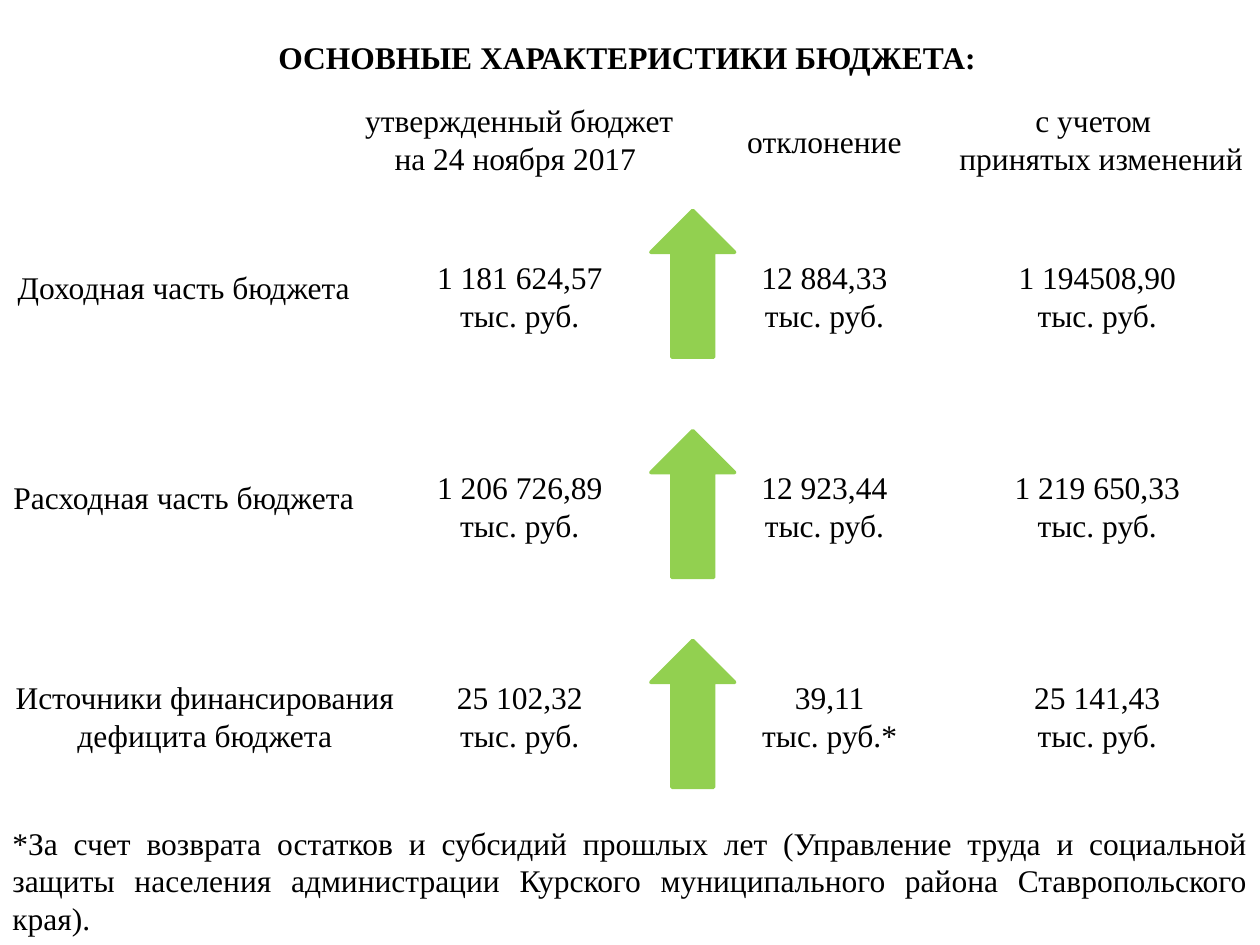
"""Build the slide with the main budget characteristics."""
from dataclasses import dataclass

from pptx import Presentation
from pptx.dml.color import RGBColor
from pptx.enum.shapes import MSO_SHAPE
from pptx.enum.text import MSO_ANCHOR, MSO_AUTO_SIZE, PP_ALIGN
from pptx.util import Cm, Pt


@dataclass(frozen=True)
class Theme:
    """Hold the colours and type of the slide."""
    font: str = "Times New Roman"
    size: Pt = Pt(18)
    text: RGBColor = RGBColor(0x00, 0x00, 0x00)
    arrow: RGBColor = RGBColor(0x92, 0xD0, 0x50)
    arrow_line: Pt = Pt(2)


THEME = Theme()
LINE_HEIGHT, TWO_LINES = 1.02, 1.8
FIRST_ROW, ROW_STEP = 5.08, 4.23
APPROVED_LEFT, DEVIATION_LEFT, AMENDED_LEFT = 8.47, 15.03, 20.11
VALUE_WIDTH = 4.02
UNIT = "тыс. руб."

HEADERS = [
    (6.98, 1.91, 6.98, TWO_LINES, ["утвержденный бюджет на 24 ноября 2017 "]),
    (14.61, 2.33, 4.02, LINE_HEIGHT, ["отклонение"]),
    (18.84, 1.91, 6.56, TWO_LINES, ["с учетом ", " принятых изменений"]),
]

ROWS = [
    ("Доходная часть бюджета", (0.2, 7.41, LINE_HEIGHT), 4.24, 3.18,
     ["1 181 624,57", UNIT], ["12 884,33", UNIT], ["1 194508,90", UNIT]),
    ("Расходная часть бюджета", (0.2, 7.41, LINE_HEIGHT), 8.68, 3.18,
     ["1 206 726,89", UNIT], ["12 923,44", UNIT], [f"1 219 650,33 {UNIT}"]),
    ("Источники финансирования дефицита бюджета", (0, 8.26, TWO_LINES), 12.91, 3.39,
     ["25 102,32", UNIT], ["39,11", f"{UNIT}*"], ["25 141,43", UNIT]),
]

FOOTNOTE = (
    "*За счет возврата остатков и субсидий прошлых лет (Управление труда и "
    "социальной защиты населения администрации Курского муниципального района "
    "Ставропольского края)."
)


def write_lines(text_frame, lines, alignment=PP_ALIGN.CENTER, bold=False):
    """Write each line as a formatted paragraph."""
    for index, line in enumerate(lines):
        paragraph = text_frame.add_paragraph() if index else text_frame.paragraphs[0]
        paragraph.alignment = alignment
        run = paragraph.add_run()
        run.text = line
        run.font.name = THEME.font
        run.font.size = THEME.size
        run.font.bold = bold
        run.font.color.rgb = THEME.text


def add_title(slide, text):
    """Place the heading in the title placeholder."""
    title = slide.shapes.title
    title.left, title.top = Cm(5.29), Cm(0.64)
    title.width, title.height = Cm(14.71), Cm(LINE_HEIGHT)
    title.text_frame.word_wrap = False
    title.text_frame.auto_size = MSO_AUTO_SIZE.NONE
    title.text_frame.vertical_anchor = MSO_ANCHOR.TOP
    write_lines(title.text_frame, [text], bold=True)


def add_text(slide, left, top, width, height, lines, alignment=PP_ALIGN.CENTER):
    """Add a wrapping text box measured in centimetres."""
    box = slide.shapes.add_textbox(Cm(left), Cm(top), Cm(width), Cm(height))
    box.text_frame.word_wrap = True
    box.text_frame.auto_size = MSO_AUTO_SIZE.SHAPE_TO_FIT_TEXT
    write_lines(box.text_frame, lines, alignment)


def add_growth_arrow(slide, top):
    """Add a green arrow that points up."""
    arrow = slide.shapes.add_shape(
        MSO_SHAPE.DOWN_ARROW, Cm(13.12), Cm(top), Cm(1.69), Cm(2.96))
    arrow.rotation = 180
    arrow.shadow.inherit = False
    arrow.fill.solid()
    arrow.fill.fore_color.rgb = THEME.arrow
    arrow.line.color.rgb = THEME.arrow
    arrow.line.width = THEME.arrow_line


def add_budget_row(slide, top, row):
    """Add the label, arrow and three values of one budget row."""
    label, label_box, arrow_top, deviation_width, approved, deviation, amended = row
    offset, label_width, label_height = label_box
    add_text(slide, 0, top + offset, label_width, label_height, [label])
    add_growth_arrow(slide, arrow_top)
    for left, width, lines in (
        (APPROVED_LEFT, VALUE_WIDTH, approved),
        (DEVIATION_LEFT, deviation_width, deviation),
        (AMENDED_LEFT, VALUE_WIDTH, amended),
    ):
        add_text(slide, left, top, width, TWO_LINES, lines)


def main():
    """Build and save the presentation."""
    presentation = Presentation()
    presentation.slide_width, presentation.slide_height = Cm(25.4), Cm(19.05)
    slide = presentation.slides.add_slide(presentation.slide_layouts[5])
    add_title(slide, "ОСНОВНЫЕ ХАРАКТЕРИСТИКИ БЮДЖЕТА:")
    for header in HEADERS:
        add_text(slide, *header)
    for index, row in enumerate(ROWS):
        add_budget_row(slide, FIRST_ROW + index * ROW_STEP, row)
    add_text(slide, 0, 16.48, 25.4, 2.57, [FOOTNOTE], PP_ALIGN.JUSTIFY)
    presentation.save("out.pptx")


if __name__ == "__main__":
    main()
